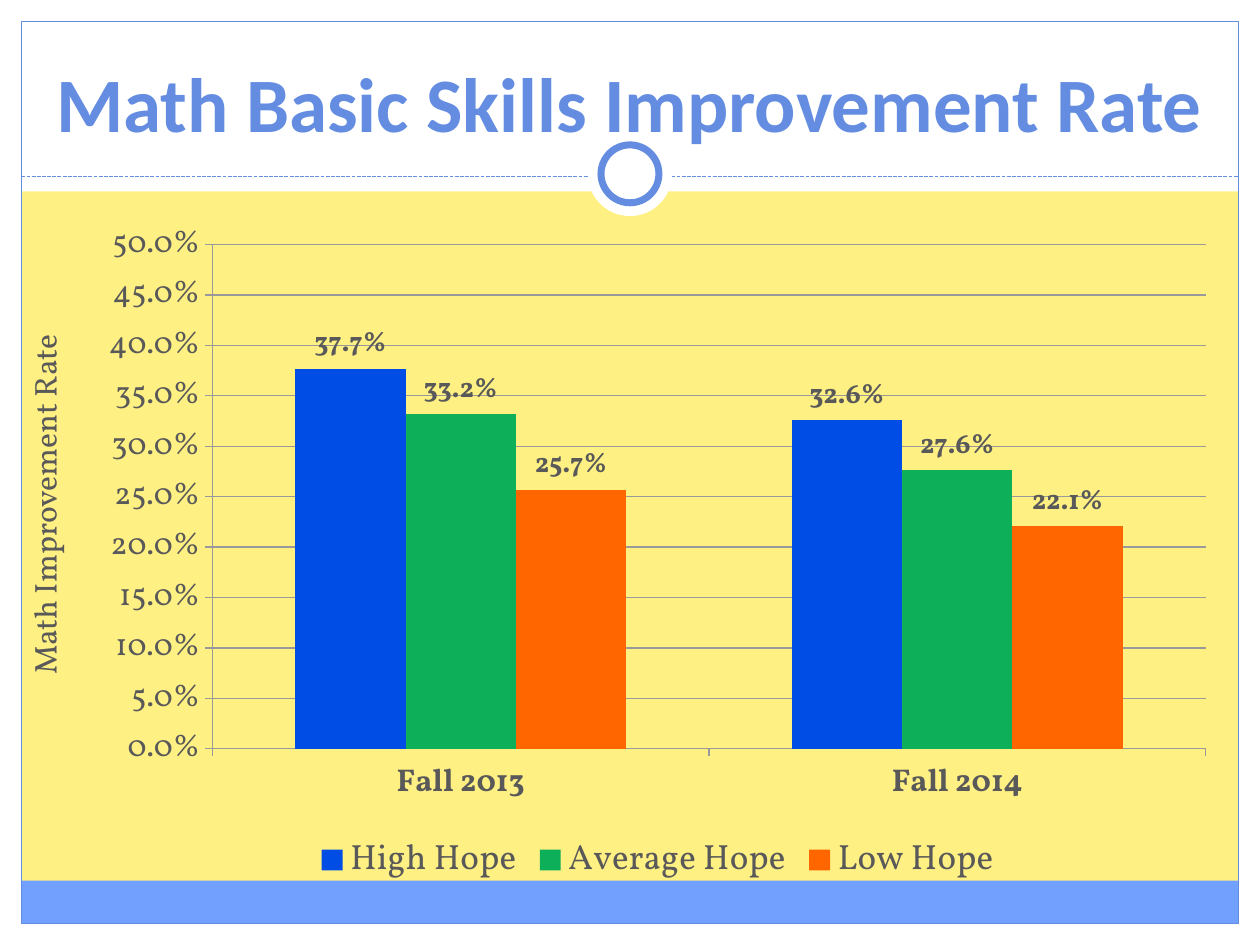
import pptx
import pptx.chart.data
import pptx.dml.color
import pptx.enum.chart
import pptx.enum.dml
import pptx.enum.shapes
import pptx.enum.text
import pptx.oxml
import pptx.oxml.ns
import pptx.util

Inches = pptx.util.Inches
Pt = pptx.util.Pt
SHAPES = pptx.enum.shapes.MSO_SHAPE

COLORS = {
    "background": "FFF084", "white": "FFFFFF", "band": "71A0FF",
    "accent": "648DE1", "text": "595959", "grid": "999999",
    "High Hope": "004DE6", "Average Hope": "0DAF58", "Low Hope": "FF6600",
}
RATES = {
    "High Hope": (0.377, 0.326),
    "Average Hope": (0.332, 0.276),
    "Low Hope": (0.257, 0.221),
}
PERCENT = "0.0%"


def color(name):
    return pptx.dml.color.RGBColor.from_string(COLORS[name])


def style_font(font, size, name="Vollkorn", ink="text", bold=False):
    values = {"size": Pt(size), "name": name, "bold": bold}
    for attribute, value in values.items():
        setattr(font, attribute, value)
    font.color.rgb = color(ink)


def style_line(line, width, ink="accent"):
    line.color.rgb = color(ink)
    line.width = Pt(width)


def add_block(slide, box, fill=None, line=None, kind=SHAPES.RECTANGLE):
    shape = slide.shapes.add_shape(kind, *map(Inches, box))
    shape.shadow.inherit = False
    if fill:
        shape.fill.solid()
        shape.fill.fore_color.rgb = color(fill)
    else:
        shape.fill.background()
    if line:
        style_line(shape.line, line)
    else:
        shape.line.fill.background()
    return shape


def add_text(slide, box, text, anchor, **font):
    shape = slide.shapes.add_textbox(*map(Inches, box))
    frame = shape.text_frame
    frame.word_wrap = True
    frame.vertical_anchor = anchor
    paragraph = frame.paragraphs[0]
    paragraph.text = text
    paragraph.alignment = pptx.enum.text.PP_ALIGN.CENTER
    style_font(paragraph.runs[0].font, **font)
    return shape


def add_frame(slide, width, height, margin=0.17, header=1.52, band=0.34):
    # White margins and header
    for box in (
        (0, height - margin, width, margin),
        (0, 0, width, header),
        (0, 0, margin, height),
        (width - margin, 0, margin, height),
    ):
        add_block(slide, box, "white")
    # Bottom band and border
    inner = width - 2 * margin
    add_block(slide, (margin, height - margin - band, inner, band), "band")
    add_block(slide, (margin, margin, inner, height - 2 * margin), line=0.75)


def add_divider(slide, left, right, y):
    connector = slide.shapes.add_connector(
        pptx.enum.shapes.MSO_CONNECTOR.STRAIGHT,
        Inches(left), Inches(y), Inches(right), Inches(y))
    style_line(connector.line, 0.75)
    connector.line.dash_style = pptx.enum.dml.MSO_LINE.SQUARE_DOT
    properties = connector._element.spPr
    properties.append(pptx.oxml.parse_xml(
        '<a:effectLst %s/>' % pptx.oxml.ns.nsdecls("a")))
    # Ring on the divider
    middle_x, middle_y = (left + right) / 2, 1.38
    for size, line in ((0.67, None), (0.46, 4)):
        box = (middle_x - size / 2, middle_y - size / 2, size, size)
        add_block(slide, box, "white", line, SHAPES.OVAL)


def set_plot_area(chart, x, y, w, h):
    plot_area = chart._chartSpace.chart.plotArea
    for layout in plot_area.findall(pptx.oxml.ns.qn("c:layout")):
        plot_area.remove(layout)
    parts = '<c:layoutTarget val="inner"/><c:xMode val="edge"/><c:yMode val="edge"/>'
    for key, value in {"x": x, "y": y, "w": w, "h": h}.items():
        parts += f'<c:{key} val="{value}"/>'
    plot_area.insert(0, pptx.oxml.parse_xml(
        f'<c:layout {pptx.oxml.ns.nsdecls("c")}>'
        f'<c:manualLayout>{parts}</c:manualLayout></c:layout>'))


def add_rate_chart(slide, box):
    data = pptx.chart.data.CategoryChartData(number_format=PERCENT)
    data.categories = ["Fall 2013", "Fall 2014"]
    for name, values in RATES.items():
        data.add_series(name, values)
    chart = slide.shapes.add_chart(
        pptx.enum.chart.XL_CHART_TYPE.COLUMN_CLUSTERED,
        *map(Inches, box), data).chart
    chart.has_title = False
    style_font(chart.font, 18)
    set_plot_area(chart, 0.11, 0.05, 0.87, 0.74)

    # Axes
    value_axis, category_axis = chart.value_axis, chart.category_axis
    scale = {"minimum_scale": 0, "maximum_scale": 0.5, "major_unit": 0.05,
             "has_major_gridlines": True}
    for attribute, value in scale.items():
        setattr(value_axis, attribute, value)
    value_axis.tick_labels.number_format = PERCENT
    value_axis.tick_labels.number_format_is_linked = False
    style_line(value_axis.major_gridlines.format.line, 0.75, "grid")
    for axis in (value_axis, category_axis):
        axis.major_tick_mark = pptx.enum.chart.XL_TICK_MARK.OUTSIDE
        style_line(axis.format.line, 0.75, "grid")
        style_font(axis.tick_labels.font, 18, bold=axis is category_axis)

    # Columns and value labels
    plot = chart.plots[0]
    plot.gap_width = 150
    plot.overlap = 0
    plot.vary_by_categories = False
    label_format = {
        "show_value": True, "number_format": PERCENT,
        "number_format_is_linked": False,
        "position": pptx.enum.chart.XL_LABEL_POSITION.OUTSIDE_END,
    }
    for series in plot.series:
        series.format.fill.solid()
        series.format.fill.fore_color.rgb = color(series.name)
        labels = series.data_labels
        for attribute, value in label_format.items():
            setattr(labels, attribute, value)
        style_font(labels.font, 16, bold=True)

    # Legend
    chart.has_legend = True
    chart.legend.position = pptx.enum.chart.XL_LEGEND_POSITION.BOTTOM
    chart.legend.include_in_layout = False
    style_font(chart.legend.font, 20)


def main():
    presentation = pptx.Presentation()
    presentation.slide_width = Inches(10)
    presentation.slide_height = Inches(7.5)
    slide = presentation.slides.add_slide(presentation.slide_layouts[6])
    slide.background.fill.solid()
    slide.background.fill.fore_color.rgb = color("background")

    anchors = pptx.enum.text.MSO_ANCHOR
    add_frame(slide, 10, 7.5)
    add_divider(slide, 0.17, 9.83, 1.4)
    add_text(slide, (0, -0.03, 10, 1.25), "Math Basic Skills Improvement Rate",
             anchors.BOTTOM, size=44, name="Calibri", ink="accent", bold=True)
    axis_title = add_text(slide, (0.15, 1.88, 0.5, 4.25),
                          "Math Improvement Rate", anchors.TOP, size=18)
    axis_title.text_frame._txBody.bodyPr.set("vert", "vert270")
    add_rate_chart(slide, (0.69, 1.67, 9.06, 5.41))
    presentation.save("out.pptx")


if __name__ == "__main__":
    main()
